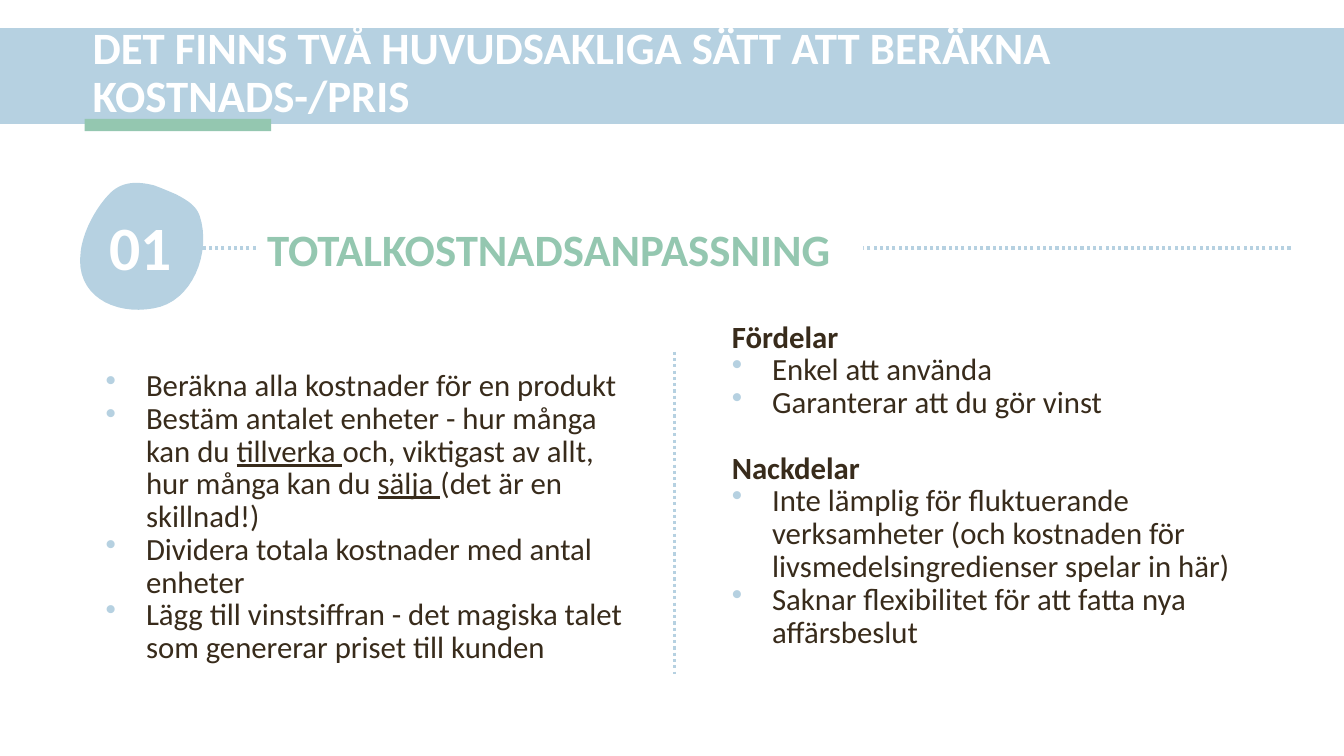
from dataclasses import dataclass
from typing import NamedTuple

from lxml.etree import SubElement
from pptx import Presentation
from pptx.dml.color import RGBColor as Rgb
from pptx.enum.dml import MSO_LINE as Dash
from pptx.enum.shapes import MSO_CONNECTOR as Connector, MSO_SHAPE as Preset
from pptx.enum.text import MSO_ANCHOR as Anchor, PP_ALIGN as Align
from pptx.oxml.ns import qn
from pptx.util import Inches, Pt


@dataclass(frozen=True)
class Theme:
    font: str = "Calibri"
    blue: str = "B6D1E1"
    green: str = "94C7B0"
    brown: str = "382B1B"
    white: str = "FFFFFF"
    heading_size: float = 32
    body_size: float = 22
    number_size: float = 44
    body_leading: float = 23.4
    heading_leading: float = 32.4
    indent: float = 0.4


class Span(NamedTuple):
    text: str
    bold: bool = False
    underline: bool = False


class Para(NamedTuple):
    spans: list[Span]
    bullet: bool = False
    before: float = 0


class Frame(NamedTuple):
    left: float
    top: float
    width: float
    height: float


class Style(NamedTuple):
    size: float
    color: str
    leading: float
    exact: bool = True
    align: Align = Align.LEFT
    anchor: Anchor = Anchor.TOP


class TextBlock(NamedTuple):
    frame: Frame
    style: Style
    paras: list[Para]
    fill: str | None = None


class DottedLine(NamedTuple):
    start: tuple[float, float]
    end: tuple[float, float]


THEME = Theme()
BODY = Style(THEME.body_size, THEME.brown, THEME.body_leading)


def heading(text: str, before: float = 0) -> Para:
    return Para([Span(text, bold=True)], before=before)


def bullet(*parts: str | Span) -> Para:
    return Para([Span(part) if isinstance(part, str) else part for part in parts], bullet=True)


# Bands behind the title
BANDS = [
    (Frame(0, 0.28, 13.33, 0.95), THEME.blue),
    (Frame(0.84, 1.18, 1.85, 0.12), THEME.green),
]

LINES = [
    DottedLine((6.69, 3.49), (6.69, 6.69)),
    DottedLine((12.8, 2.46), (0.9, 2.46)),
]

# Number blob: start point, then Bézier segments of two controls and an end
BLOB_START = (1.53, 1.84)
BLOB_CURVES = [
    ((1.37, 1.8), (1.2, 1.79), (1.07, 1.94)),
    ((0.94, 2.08), (0.82, 2.31), (0.8, 2.5)),
    ((0.74, 2.93), (1.13, 3.13), (1.52, 3.06)),
    ((1.91, 3), (2.1, 2.5), (1.98, 2.14)),
    ((1.94, 2.03), (1.84, 1.98), (1.75, 1.93)),
    ((1.68, 1.9), (1.61, 1.87), BLOB_START),
]
CURVE_STEPS = 16

TITLE = TextBlock(
    Frame(0.82, 0.34, 11.93, 0.79),
    Style(THEME.heading_size, THEME.white, 0.9, exact=False, anchor=Anchor.MIDDLE),
    [heading("DET FINNS TVÅ HUVUDSAKLIGA SÄTT ATT BERÄKNA KOSTNADS-/PRIS")],
)
STEPS = TextBlock(Frame(0.95, 3.62, 5.51, 3.63), BODY, [
    bullet("Beräkna alla kostnader för en produkt"),
    bullet(
        "Bestäm antalet enheter - hur många kan du ",
        Span("tillverka ", underline=True),
        "och, viktigast av allt, hur många kan du ",
        Span("sälja ", underline=True),
        "(det är en skillnad!)",
    ),
    bullet("Dividera totala kostnader med antal enheter"),
    bullet("Lägg till vinstsiffran - det magiska talet som genererar priset till kunden"),
])
PROS_AND_CONS = TextBlock(Frame(7.16, 3.14, 5.51, 3.63), BODY, [
    heading("Fördelar"),
    bullet("Enkel att använda"),
    bullet("Garanterar att du gör vinst"),
    heading("Nackdelar", before=THEME.body_leading),
    bullet("Inte lämplig för fluktuerande verksamheter "
           "(och kostnaden för livsmedelsingredienser spelar in här)"),
    bullet("Saknar flexibilitet för att fatta nya affärsbeslut"),
])
METHOD = TextBlock(
    Frame(2.55, 2.23, 6.01, 0.62),
    Style(THEME.heading_size, THEME.green, THEME.heading_leading),
    [heading("TOTALKOSTNADSANPASSNING")],
    fill=THEME.white,
)
NUMBER = TextBlock(
    Frame(0.79, 2.43, 1.21, 1.01),
    Style(THEME.number_size, THEME.white, THEME.body_leading, align=Align.CENTER),
    [heading("01")],
)


def paint(shape, color: str) -> None:
    shape.shadow.inherit = False
    shape.fill.solid()
    shape.fill.fore_color.rgb = Rgb.from_string(color)
    shape.line.fill.background()


def add_band(page, frame: Frame, color: str):
    band = page.shapes.add_shape(Preset.RECTANGLE, *map(Inches, frame))
    paint(band, color)
    return band


def add_dotted_line(page, line: DottedLine) -> None:
    connector = page.shapes.add_connector(
        Connector.STRAIGHT, *map(Inches, (*line.start, *line.end)))
    connector.line.color.rgb = Rgb.from_string(THEME.blue)
    connector.line.width = Pt(2.25)
    connector.line.dash_style = Dash.ROUND_DOT
    SubElement(connector.element.spPr, qn("a:effectLst"))


def add_blob(page) -> None:
    points = []
    start = BLOB_START
    for first, second, end in BLOB_CURVES:
        for step in range(1, CURVE_STEPS + 1):
            t = step / CURVE_STEPS
            u = 1 - t
            points.append(tuple(
                Inches(u**3 * a + 3 * u * u * t * b + 3 * u * t * t * c + t**3 * d)
                for a, b, c, d in zip(start, first, second, end)))
        start = end
    builder = page.shapes.build_freeform(*map(Inches, BLOB_START), scale=1.0)
    builder.add_line_segments(points, close=True)
    paint(builder.convert_to_shape(), THEME.blue)


def add_bullet_mark(para) -> None:
    props = para._p.get_or_add_pPr()
    props.set("marL", str(Inches(THEME.indent)))
    props.set("indent", str(-Inches(THEME.indent)))
    SubElement(SubElement(props, qn("a:buClr")), qn("a:srgbClr"), val=THEME.blue)
    SubElement(props, qn("a:buChar"), char="•")


def add_text(page, block: TextBlock) -> None:
    if block.fill:
        box = add_band(page, block.frame, block.fill)
    else:
        box = page.shapes.add_textbox(*map(Inches, block.frame))
    style, body = block.style, box.text_frame
    body.word_wrap = True
    body.vertical_anchor = style.anchor
    for index, content in enumerate(block.paras):
        para = body.add_paragraph() if index else body.paragraphs[0]
        if content.bullet:
            add_bullet_mark(para)
        layout = {
            "alignment": style.align,
            "line_spacing": Pt(style.leading) if style.exact else style.leading,
            "space_before": Pt(content.before),
        }
        for name, value in layout.items():
            setattr(para, name, value)
        for span in content.spans:
            run = para.add_run()
            run.text = span.text
            look = {"name": THEME.font, "size": Pt(style.size),
                    "bold": span.bold, "underline": span.underline}
            for name, value in look.items():
                setattr(run.font, name, value)
            run.font.color.rgb = Rgb.from_string(style.color)


def main() -> None:
    deck = Presentation()
    deck.slide_width, deck.slide_height = Inches(13.33), Inches(7.5)
    page = deck.slides.add_slide(deck.slide_layouts[6])
    for frame, color in BANDS:
        add_band(page, frame, color)
    for block in (TITLE, STEPS, PROS_AND_CONS):
        add_text(page, block)
    for line in LINES:
        add_dotted_line(page, line)
    add_text(page, METHOD)
    add_blob(page)
    add_text(page, NUMBER)
    deck.save("out.pptx")


if __name__ == "__main__":
    main()
